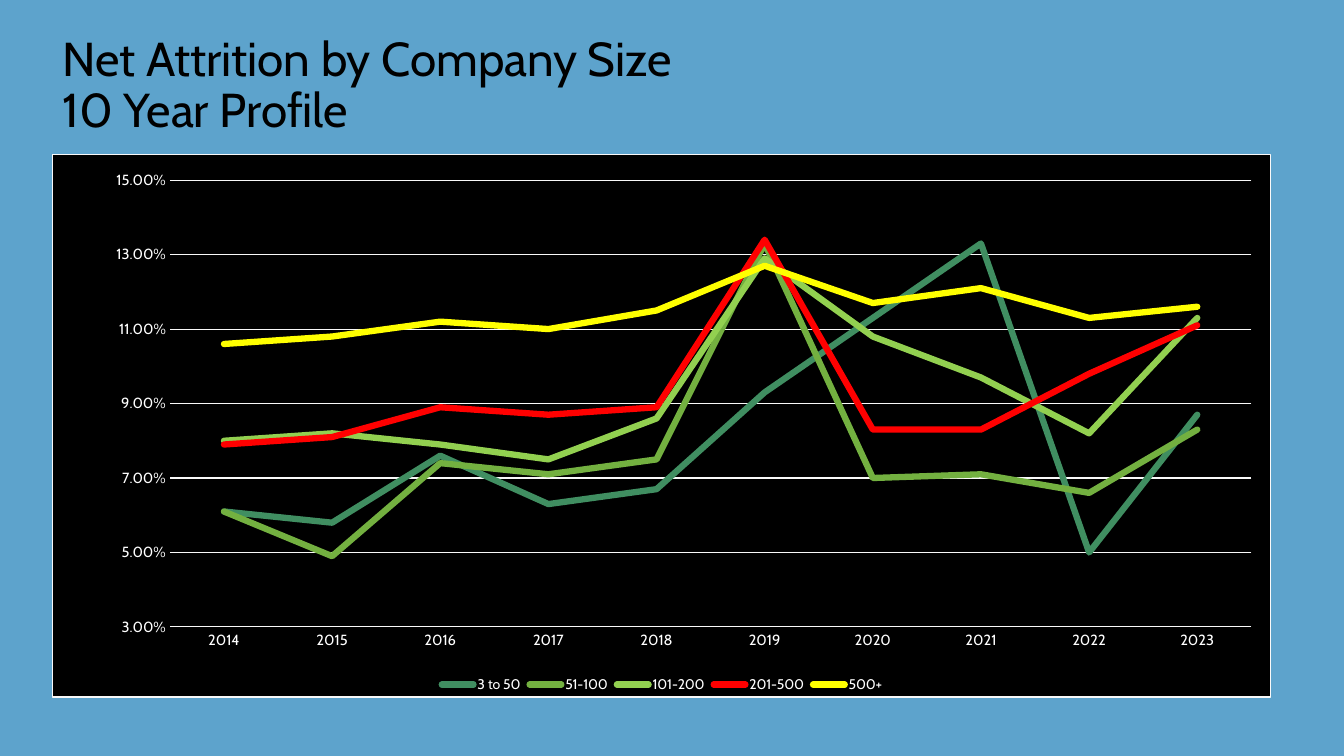
"""Build the slide on net attrition by company size."""
import dataclasses

import lxml.etree
import pptx
import pptx.chart.data
import pptx.dml.color
import pptx.enum.chart
import pptx.enum.text
import pptx.oxml
import pptx.oxml.ns
import pptx.util

Inches = pptx.util.Inches
Pt = pptx.util.Pt
qn = pptx.oxml.ns.qn


@dataclasses.dataclass(frozen=True)
class Theme:
    """Hold the colours, font and type sizes."""
    font: str = "Cabin"
    back: str = "5DA3CC"
    ink: str = "000000"
    panel: str = "000000"
    grid: str = "F9F9F9"
    label: str = "FFFFFF"
    title: float = 34
    axis: float = 10.5
    key: float = 10
    thin: float = 0.75
    thick: float = 4.5


THEME = Theme()
TITLE = ("Net Attrition by Company Size", "10 Year Profile")
YEARS = [str(year) for year in range(2014, 2024)]
RATES = {
    "3 to 50": ("408E61", (6.1, 5.8, 7.6, 6.3, 6.7, 9.3, 11.3, 13.3, 5.0, 8.7)),
    "51-100": ("73B040", (6.1, 4.9, 7.4, 7.1, 7.5, 13.3, 7.0, 7.1, 6.6, 8.3)),
    "101-200": ("92D050", (8.0, 8.2, 7.9, 7.5, 8.6, 12.9, 10.8, 9.7, 8.2, 11.3)),
    "201-500": ("FF0000", (7.9, 8.1, 8.9, 8.7, 8.9, 13.4, 8.3, 8.3, 9.8, 11.1)),
    "500+": ("FFFF00", (10.6, 10.8, 11.2, 11.0, 11.5, 12.7, 11.7, 12.1, 11.3, 11.6)),
}


def apply(target, values):
    """Set each named attribute on the target."""
    for name, value in values.items():
        setattr(target, name, value)


def rgb(code):
    """Turn a hex code into a colour."""
    return pptx.dml.color.RGBColor.from_string(code)


def style_font(font, size, colour):
    """Give a font its face, size and colour."""
    apply(font, {"name": THEME.font, "size": Pt(size), "bold": False})
    font.color.rgb = rgb(colour)


def style_line(line, colour, width):
    """Give a line its colour and width."""
    line.color.rgb = rgb(colour)
    line.width = Pt(width)


def add_title(slide):
    """Add the two-line title."""
    box = slide.shapes.add_textbox(Inches(0.52), Inches(0.22), Inches(9.06), Inches(1.2))
    apply(box.text_frame, {
        "word_wrap": True,
        "vertical_anchor": pptx.enum.text.MSO_ANCHOR.BOTTOM,
    })
    para = box.text_frame.paragraphs[0]
    para.line_spacing = 0.9
    para.text = "\v".join(TITLE)
    for run in para.runs:
        style_font(run.font, THEME.title, THEME.ink)


def make_fill(border=""):
    """Return panel shape properties with an optional border."""
    return pptx.oxml.parse_xml(
        f'<c:spPr {pptx.oxml.ns.nsdecls("c", "a")}><a:solidFill>'
        f'<a:srgbClr val="{THEME.panel}"/></a:solidFill>{border}</c:spPr>')


def style_panel(chart):
    """Fill the chart, place its plot and round the line ends."""
    root = chart.element
    border = (f'<a:ln w="{Pt(THEME.thin)}"><a:solidFill>'
              f'<a:srgbClr val="{THEME.grid}"/></a:solidFill></a:ln>')
    root.find(qn("c:chart")).addnext(make_fill(border))
    plot = root.find(qn("c:chart")).find(qn("c:plotArea"))
    plot.append(make_fill())
    for old in plot.findall(qn("c:layout")):
        plot.remove(old)
    layout = lxml.etree.Element(qn("c:layout"))
    manual = lxml.etree.SubElement(layout, qn("c:manualLayout"))
    places = {"layoutTarget": "inner", "xMode": "edge", "yMode": "edge",
              "x": 0.096, "y": 0.047, "w": 0.888, "h": 0.824}
    for name, value in places.items():
        lxml.etree.SubElement(manual, qn(f"c:{name}"), val=str(value))
    plot.insert(0, layout)
    for line in root.xpath(".//c:ser/c:spPr/a:ln"):
        line.set("cap", "rnd")
        lxml.etree.SubElement(line, qn("a:round"))


def style_axes(chart):
    """Set the scale, labels and grid."""
    none = pptx.enum.chart.XL_TICK_MARK.NONE
    for axis in (chart.category_axis, chart.value_axis):
        apply(axis, {"major_tick_mark": none, "minor_tick_mark": none})
        style_font(axis.tick_labels.font, THEME.axis, THEME.label)
    style_line(chart.category_axis.format.line, THEME.grid, THEME.thin)
    scale = chart.value_axis
    apply(scale, {"minimum_scale": 0.03, "maximum_scale": 0.15,
                  "major_unit": 0.02, "has_major_gridlines": True})
    apply(scale.tick_labels, {"number_format": "0.00%",
                              "number_format_is_linked": False})
    scale.format.line.fill.background()
    style_line(scale.major_gridlines.format.line, THEME.grid, THEME.thin)


def add_rates(slide):
    """Add the line chart of yearly rates."""
    data = pptx.chart.data.CategoryChartData(number_format="0.00%")
    data.categories = YEARS
    for name, (_, rates) in RATES.items():
        data.add_series(name, [round(rate / 100, 3) for rate in rates])
    chart = slide.shapes.add_chart(
        pptx.enum.chart.XL_CHART_TYPE.LINE, Inches(0.52), Inches(1.53),
        Inches(12.09), Inches(5.39), data).chart
    apply(chart, {"has_title": False, "has_legend": True})
    style_font(chart.font, THEME.key, THEME.label)
    apply(chart.legend, {"include_in_layout": False,
                         "position": pptx.enum.chart.XL_LEGEND_POSITION.BOTTOM})
    style_font(chart.legend.font, THEME.key, THEME.label)
    chart.plots[0].vary_by_categories = False
    for line, (colour, _) in zip(chart.plots[0].series, RATES.values()):
        line.smooth = False
        style_line(line.format.line, colour, THEME.thick)
    style_axes(chart)
    style_panel(chart)


def main():
    """Build and save the slide."""
    deck = pptx.Presentation()
    apply(deck, {"slide_width": Inches(13.33), "slide_height": Inches(7.5)})
    slide = deck.slides.add_slide(deck.slide_layouts[6])
    fill = slide.background.fill
    fill.solid()
    fill.fore_color.rgb = rgb(THEME.back)
    add_title(slide)
    add_rates(slide)
    deck.save("out.pptx")


if __name__ == "__main__":
    main()
